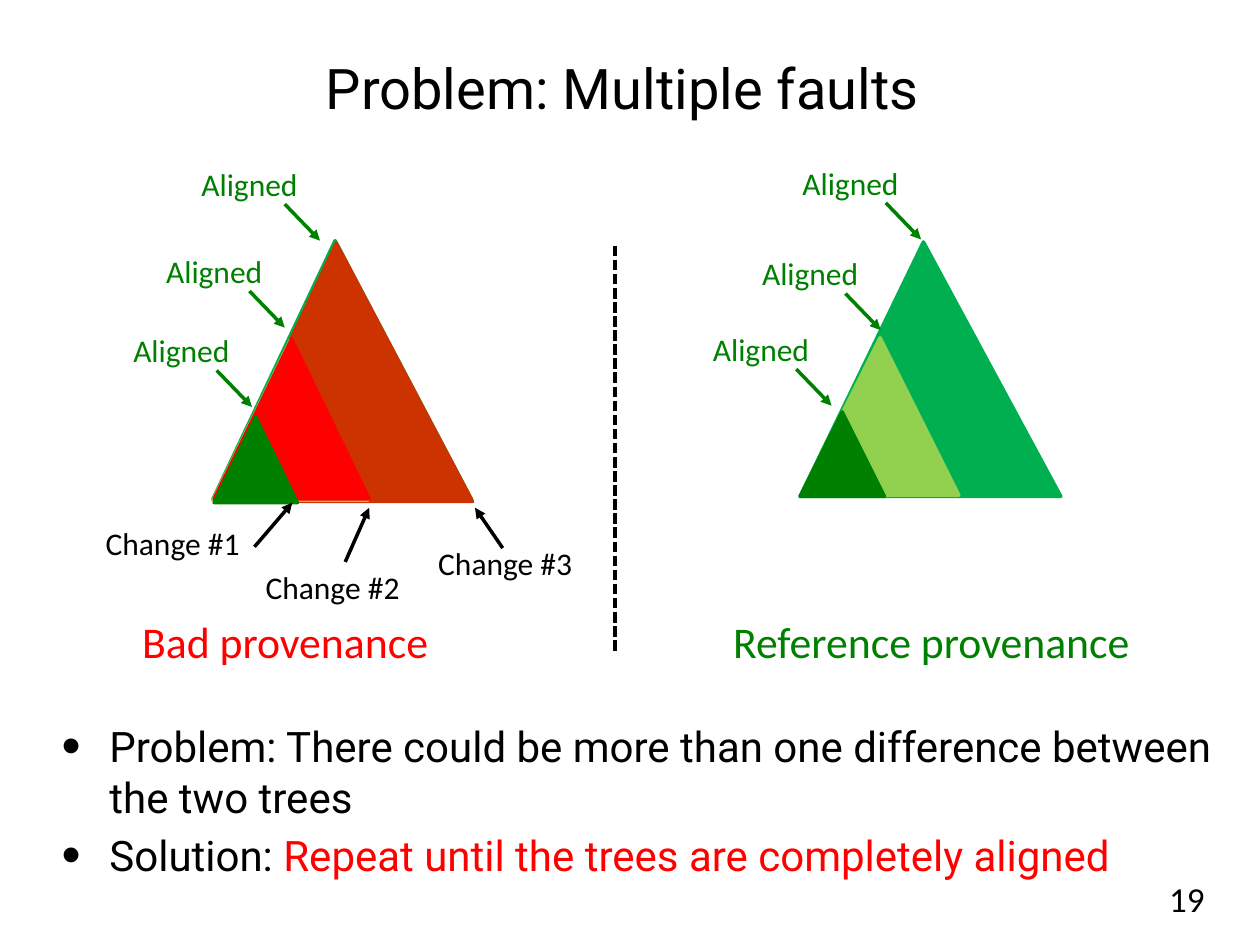
from lxml.etree import SubElement
from pptx import Presentation
from pptx.dml.color import RGBColor
from pptx.enum.dml import MSO_LINE
from pptx.enum.shapes import MSO_CONNECTOR, MSO_SHAPE
from pptx.enum.text import MSO_ANCHOR, PP_ALIGN
from pptx.oxml.ns import qn
from pptx.util import Inches, Pt

BLACK = RGBColor(0x00, 0x00, 0x00)
RED = RGBColor(0xFF, 0x00, 0x00)
RUST = RGBColor(0xCC, 0x33, 0x00)
DARK_GREEN = RGBColor(0x00, 0x80, 0x00)
GREEN = RGBColor(0x00, 0xB0, 0x50)
LIME = RGBColor(0x92, 0xD0, 0x50)

prs = Presentation()
prs.slide_width, prs.slide_height = Inches(10), Inches(7.5)
COL = prs.slide_width / 100  # grid of 100 columns by 75 rows
ROW = prs.slide_height / 75
s = prs.slides.add_slide(prs.slide_layouts[6])


def add_text(col, row, cols, rows, runs, size, font="Calibri", **paragraph):
    """Add a text box with one paragraph per list of (text, colour) runs."""
    box = s.shapes.add_textbox(*map(round, (col * COL, row * ROW, cols * COL, rows * ROW)))
    tf = box.text_frame
    tf.word_wrap = True
    for i, line in enumerate(runs):
        p = tf.add_paragraph() if i else tf.paragraphs[0]
        for name, value in paragraph.items():
            setattr(p, name, value)
        for text, color in line:
            r = p.add_run()
            r.text = text
            for name, value in {"size": Pt(size), "name": font}.items():
                setattr(r.font, name, value)
            r.font.color.rgb = color
    return tf


def add_line(x1, y1, x2, y2, color, arrow=True):
    line = s.shapes.add_connector(
        MSO_CONNECTOR.STRAIGHT, *map(round, (x1 * COL, y1 * ROW, x2 * COL, y2 * ROW)))
    line.line.color.rgb = color
    line.line.width = Pt(2)
    if arrow:
        SubElement(line.line._get_or_add_ln(), qn("a:tailEnd"), type="triangle")
    SubElement(line._element.spPr, qn("a:effectLst"))
    return line


# Title, page number and bullets
title = add_text(6.8, 1.5, 85.2, 10.8, [[("Problem: Multiple faults", BLACK)]], 32,
                 "Roboto", alignment=PP_ALIGN.CENTER)
number = add_text(73.3, 69.3, 23.3, 4, [[("19", BLACK)]], 20, alignment=PP_ALIGN.RIGHT)
for tf in (title, number):
    tf.vertical_anchor = MSO_ANCHOR.MIDDLE

bullets = add_text(3.9, 56.7, 95.8, 15.1, [
    [("Problem: There could be more than one difference between the two trees", BLACK)],
    [("Solution: ", BLACK), ("Repeat until the trees are completely aligned", RED)],
], 24, "Roboto", space_before=Pt(4.8))
for p in bullets.paragraphs:
    pPr = p._p.get_or_add_pPr()
    pPr.set("marL", str(Inches(0.38)))
    pPr.set("indent", str(-Inches(0.38)))
    SubElement(pPr, qn("a:buSzPct"), val="130000")
    SubElement(pPr, qn("a:buFont"), typeface="Arial")
    SubElement(pPr, qn("a:buChar"), char="•")

# The two trees, each with its nested subtrees: col, row, cols, rows, apex, colour
TRIANGLES = [
    (16.9, 19.1, 20.5, 20.5, 0.473, GREEN),
    (17, 19.3, 20.5, 20.5, 0.473, RUST),
    (16.9, 27, 12.3, 12.7, 0.5, LIME),
    (17, 26.9, 12.3, 12.7, 0.5, RED),
    (17, 33.1, 6.6, 6.8, 0.5, DARK_GREEN),
    (63.5, 19.2, 20.7, 20.2, 0.473, GREEN),
    (63.6, 26.8, 12.5, 12.5, 0.5, LIME),
    (63.5, 32.7, 6.7, 6.7, 0.5, DARK_GREEN),
]
for col, row, cols, rows, apex, color in TRIANGLES:
    tree = s.shapes.add_shape(
        MSO_SHAPE.ISOSCELES_TRIANGLE,
        *map(round, (col * COL, row * ROW, cols * COL, rows * ROW)))
    tree.adjustments[0] = apex
    tree.shadow.inherit = False
    tree.fill.solid()
    tree.fill.fore_color.rgb = color
    tree.line.color.rgb = color
    tree.line.width = Pt(2)

# Divider and tree captions
divider = add_line(48.8, 19.5, 48.8, 51.9, BLACK, arrow=False)
divider.line.dash_style = MSO_LINE.SQUARE_DOT
add_text(10.3, 48.3, 34.4, 5.2, [[("Bad provenance", RED)]], 25)
add_text(57.2, 48.3, 40.8, 5.2, [[("Reference provenance", DARK_GREEN)]], 25)

# Every "Aligned" label has the same arrow, leaving its lower right
for col, row in [(15, 12.6), (12.2, 19.5), (9.6, 25.8),
                 (62.7, 12.5), (59.5, 19.7), (55.6, 25.7)]:
    add_text(col, row, 10.6, 4, [[("Aligned", DARK_GREEN)]], 18)
    add_line(col + 7.6, row + 3.6, col + 10.4, row + 6.5, DARK_GREEN)

# Changes: label position, then arrow start and end
CHANGES = [
    (7.4, 41.1, (20.2, 43.4, 23.2, 39.9)),
    (20.1, 44.6, (27.4, 44.6, 29.3, 40.3)),
    (33.8, 42.7, (39.9, 43.5, 37.7, 40.3)),
]
for i, (col, row, arrow) in enumerate(CHANGES, 1):
    add_text(col, row, 14.6, 4, [[(f"Change #{i}", BLACK)]], 18)
    add_line(*arrow, BLACK)

prs.save("out.pptx")
